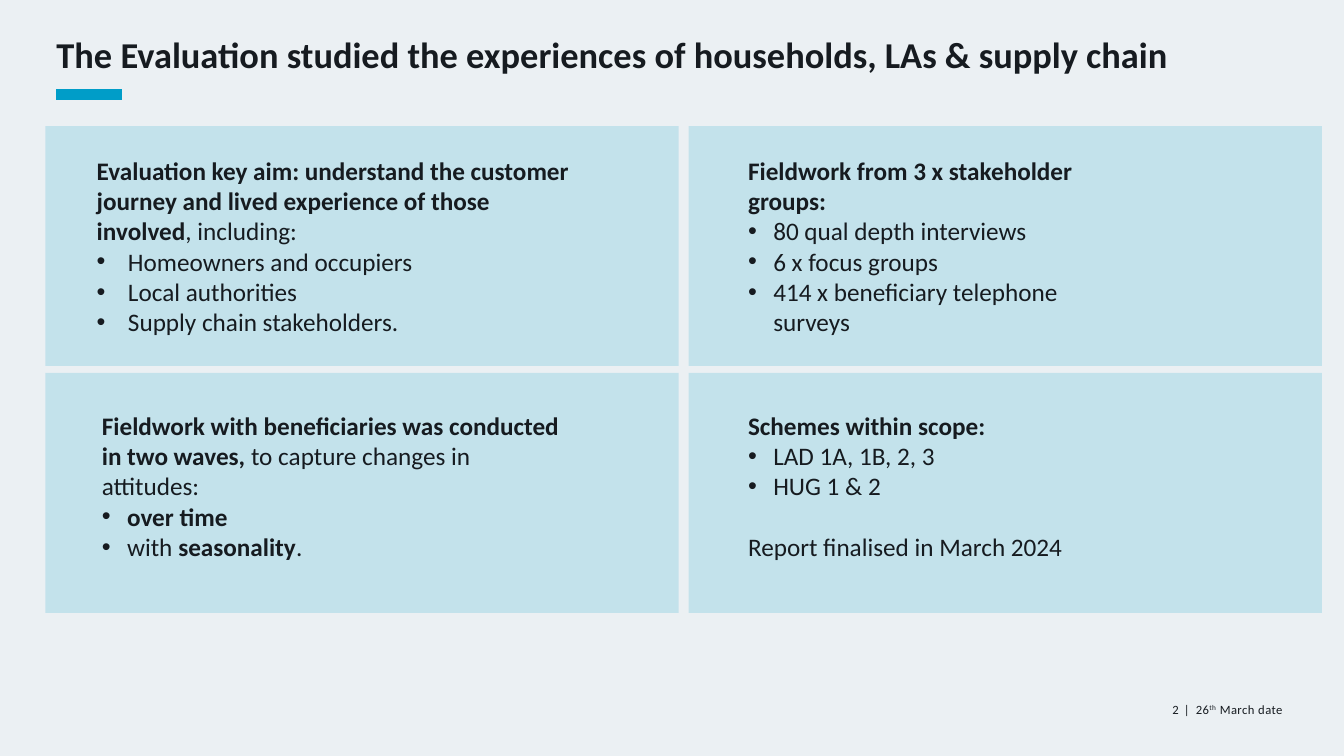
from lxml.etree import SubElement
from pptx import Presentation
from pptx.dml.color import RGBColor
from pptx.enum.shapes import MSO_CONNECTOR as Connector, MSO_SHAPE as Shape
from pptx.enum.text import MSO_ANCHOR as Anchor, MSO_AUTO_SIZE as AutoSize, PP_ALIGN as Align
from pptx.oxml.ns import qn
from pptx.util import Inches, Pt

COLOURS = {"page": "EBF0F3", "accent": "009DC8", "ink": "161B20"}
FONT = "Calibri"

# Panel grid, in percent of the slide's width and height
GRID_LEFT, GRID_TOP = 3.38, 16.67
PANEL_WIDTH, PANEL_HEIGHT = 47.11, 31.73
COLUMN_STEP, ROW_STEP = 47.86, 32.67
TEXT_TOPS, TEXT_HEIGHTS = (3.86, 4.93), (24.27, 20.13)

# column, row, text inset, text width, bullet indent in inches, paragraphs;
# asterisks switch bold on and off
PANELS = [
    (0, 0, 3.82, 36.31, 0.31, [
        "*Evaluation key aim: understand the customer journey and lived "
        "experience of those involved*, including:",
        "• Homeowners and occupiers",
        "• Local authorities",
        "• Supply chain stakeholders.",
    ]),
    (0, 1, 4.2, 34.43, 0.25, [
        "*Fieldwork with beneficiaries was conducted in two waves, *"
        "to capture changes in attitudes:",
        "• *over time*",
        "• with *seasonality*.",
    ]),
    (1, 0, 4.42, 27.76, 0.25, [
        "*Fieldwork from 3 x stakeholder groups:*",
        "• 80 qual depth interviews",
        "• 6 x focus groups",
        "• 414 x beneficiary telephone surveys",
    ]),
    (1, 1, 4.42, 34.43, 0.25, [
        "*Schemes within scope:*",
        "• LAD 1A, 1B, 2, 3",
        "• HUG 1 & 2",
        "Report finalised in March 2024",
    ]),
]


def colour(name):
    return RGBColor.from_string(COLOURS[name])


class SlideBuilder:
    """Draws on one slide; places and sizes are percent of the slide."""

    def __init__(self, deck):
        self.deck = deck
        self.page = deck.slides.add_slide(deck.slide_layouts[5])
        background = self.page.background.fill
        background.solid()
        background.fore_color.rgb = colour("page")

    def across(self, share):
        return round(self.deck.slide_width * share / 100)

    def down(self, share):
        return round(self.deck.slide_height * share / 100)

    def area(self, left, top, width, height):
        return self.across(left), self.down(top), self.across(width), self.down(height)

    def prepare(self, frame, anchor=Anchor.TOP):
        frame.margin_left = frame.margin_right = 0
        frame.margin_top = frame.margin_bottom = 0
        frame.word_wrap = True
        frame.auto_size = AutoSize.NONE
        frame.vertical_anchor = anchor
        return frame

    def style(self, paragraph, size, bold=None):
        font = paragraph.font
        font.name, font.size, font.bold = FONT, Pt(size), bold
        font.color.rgb = colour("ink")

    def title(self, text, *area):
        box = self.page.shapes.title
        box.left, box.top, box.width, box.height = self.area(*area)
        paragraph = self.prepare(box.text_frame).paragraphs[0]
        paragraph.text = text
        paragraph.alignment = Align.LEFT
        paragraph.line_spacing = 0.74
        self.style(paragraph, 26, True)

    def rule(self, left, right, top, weight):
        line = self.page.shapes.add_connector(
            Connector.STRAIGHT, self.across(left), self.down(top),
            self.across(right), self.down(top))
        line.line.color.rgb = colour("accent")
        line.line.width = Pt(weight)
        SubElement(line._element.spPr, qn("a:effectLst"))

    def panel(self, *area):
        box = self.page.shapes.add_shape(Shape.RECTANGLE, *self.area(*area))
        box.shadow.inherit = False
        box.line.fill.background()
        box.fill.solid()
        box.fill.fore_color.rgb = colour("accent")
        tint = box._element.spPr.find(".//" + qn("a:srgbClr"))
        SubElement(tint, qn("a:alpha"), val="17000")

    def bullet(self, paragraph, indent):
        properties = paragraph._p.get_or_add_pPr()
        properties.set("marL", str(Inches(indent)))
        properties.set("indent", str(-Inches(indent)))
        SubElement(properties, qn("a:buFont"), typeface="Arial")
        SubElement(properties, qn("a:buChar"), char="•")

    def body(self, texts, indent, *area):
        box = self.page.shapes.add_textbox(*self.area(*area))
        frame = self.prepare(box.text_frame)
        after_bullet = False
        for index, text in enumerate(texts):
            paragraph = frame.add_paragraph() if index else frame.paragraphs[0]
            is_bullet = text.startswith("• ")
            if is_bullet:
                self.bullet(paragraph, indent)
            elif after_bullet:
                paragraph.space_before = Pt(22)
            self.style(paragraph, 18)
            for position, part in enumerate(text.removeprefix("• ").split("*")):
                if part:
                    span = paragraph.add_run()
                    span.text = part
                    span.font.bold = position % 2 == 1
            after_bullet = is_bullet

    def footer(self, spans, left, width, align, anchor=Anchor.MIDDLE, spacing=0):
        """Spans are (text, baseline shift in percent); spacing is in points."""
        box = self.page.shapes.add_textbox(*self.area(left, 92.8, width, 2))
        paragraph = self.prepare(box.text_frame, anchor).paragraphs[0]
        paragraph.alignment = align
        self.style(paragraph, 9)
        for text, baseline in spans:
            span = paragraph.add_run()
            span.text = text
            properties = span._r.get_or_add_rPr()
            properties.set("baseline", str(baseline * 1000))
            properties.set("spc", str(round(spacing * 100)))


def main():
    deck = Presentation()
    deck.slide_width, deck.slide_height = Inches(13.33), Inches(7.5)
    slide = SlideBuilder(deck)

    slide.rule(4.2, 9.08, 12.53, 7.5)
    slide.footer([("26", 0), ("th", 30), (" March date", 0)], 88.97, 7.8,
                 Align.LEFT, spacing=0.3)
    slide.footer([("2", 0)], 84.85, 2.85, Align.RIGHT)
    slide.footer([("|", 0)], 87.85, 0.9, Align.CENTER, Anchor.TOP)
    slide.title("The Evaluation studied the experiences of households, LAs & supply chain",
                4.2, 5.6, 86.27, 4.53)

    for column, row, inset, width, indent, texts in PANELS:
        left = GRID_LEFT + column * COLUMN_STEP
        top = GRID_TOP + row * ROW_STEP
        slide.panel(left, top, PANEL_WIDTH, PANEL_HEIGHT)
        slide.body(texts, indent, left + inset, top + TEXT_TOPS[row],
                   width, TEXT_HEIGHTS[row])

    deck.save("out.pptx")


if __name__ == "__main__":
    main()
